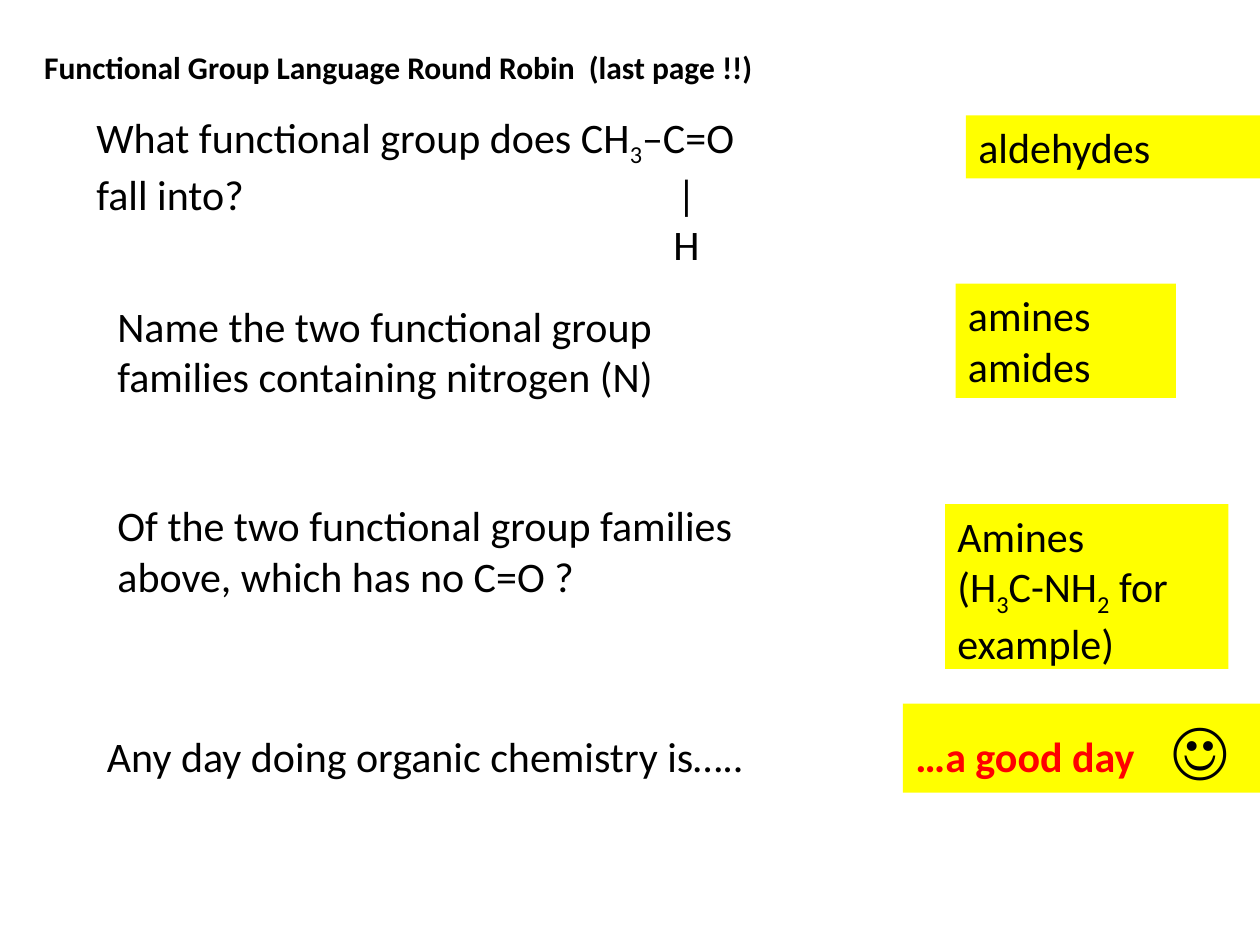
from dataclasses import dataclass

from lxml import etree
from pptx import Presentation
from pptx.dml.color import RGBColor
from pptx.enum.shapes import MSO_SHAPE
from pptx.enum.text import MSO_ANCHOR, MSO_AUTO_SIZE, PP_ALIGN
from pptx.oxml.ns import qn
from pptx.util import Pt

RECT = MSO_SHAPE.RECTANGLE
TOP = MSO_ANCHOR.TOP
LEFT = PP_ALIGN.LEFT
FIXED = MSO_AUTO_SIZE.NONE

PX = 7620  # EMU per px, 120 px to the inch
FONT = "Calibri"
SIZE = 24
COLORS = {"ink": "000000", "mark": "FFFF00", "cheer": "FF0000"}


@dataclass
class Box:
    """A text block; underscores enclose subscripts in its lines."""
    x: int
    y: int
    w: int
    h: int
    lines: list[str]
    tab: int = 0
    align: str = "ctr"


TITLE = Box(30, 40, 860, 48,
            ["Functional Group Language Round Robin  (last page !!)"])
ASKS = [
    Box(80, 100, 650, 157,
        ["What functional group does CH_3_–C=O fall into?\t|", "\tH"], tab=562),
    Box(100, 280, 660, 109,
        ["Name the two functional group families containing nitrogen (N)"]),
    Box(100, 470, 700, 109,
        ["Of the two functional group families above, which has no C=O ?"]),
    Box(90, 690, 760, 60, ["Any day doing organic chemistry is….."]),
]
REPLIES = [
    Box(920, 110, 280, 60, ["aldehydes"]),
    Box(910, 270, 210, 109, ["amines", "amides"]),
    Box(900, 480, 270, 157, ["Amines", "(H_3_C-NH_2_ for example)"]),
]
CHEER = Box(860, 670, 340, 85, ["…a good day\t_☺"], tab=244, align="l")


def style(run, size: int = SIZE, color: str = "ink", bold: bool = False) -> None:
    font = run.font
    font.name, font.size, font.bold = FONT, Pt(size), bold
    font.color.rgb = RGBColor.from_string(COLORS[color])


def area(box: Box) -> list[int]:
    return [n * PX for n in (box.x, box.y, box.w, box.h)]


def write(shape, box: Box) -> list:
    """Fill the shape with the box's lines and return all runs in order."""
    frame = shape.text_frame
    frame.word_wrap = True
    frame.auto_size = FIXED
    frame.vertical_anchor = TOP
    frame.text = "\n".join(line.split("_")[0] for line in box.lines)
    runs = []
    for para, line in zip(frame.paragraphs, box.lines):
        para.alignment = LEFT
        for part in line.split("_")[1:]:
            para.add_run().text = part
        if box.tab:
            stops = etree.SubElement(para._p.get_or_add_pPr(), qn("a:tabLst"))
            etree.SubElement(stops, qn("a:tab"), pos=str(box.tab * PX),
                             algn=box.align)
        for run in para.runs:
            style(run)
        runs += para.runs
    return runs


def lower(runs: list, box: Box) -> None:
    """Set every second part of each line as a subscript."""
    spots = [i % 2 for line in box.lines for i in range(len(line.split("_")))]
    for run, low in zip(runs, spots):
        if low:
            run.font._element.set("baseline", "-25000")


def ask(slide, box: Box) -> None:
    lower(write(slide.shapes.add_textbox(*area(box)), box), box)


def reply(slide, box: Box) -> list:
    """Draw a highlighted answer and return its runs."""
    shape = slide.shapes.add_shape(RECT, *area(box))
    shape.shadow.inherit = False
    shape.fill.solid()
    shape.fill.fore_color.rgb = RGBColor.from_string(COLORS["mark"])
    shape.line.fill.background()
    return write(shape, box)


def head(slide, box: Box) -> None:
    title = slide.shapes.title
    title.left, title.top, title.width, title.height = area(box)
    for run in write(title, box):
        style(run, size=18, bold=True)


def main() -> None:
    deck = Presentation()
    deck.slide_width, deck.slide_height = 1200 * PX, 900 * PX
    slide = deck.slides.add_slide(deck.slide_layouts.get_by_name("Title Only"))
    head(slide, TITLE)
    for box in ASKS:
        ask(slide, box)
    for box in REPLIES:
        lower(reply(slide, box), box)
    words, smile = reply(slide, CHEER)
    style(words, color="cheer", bold=True)
    style(smile, size=36)
    deck.save("out.pptx")


if __name__ == "__main__":
    main()
